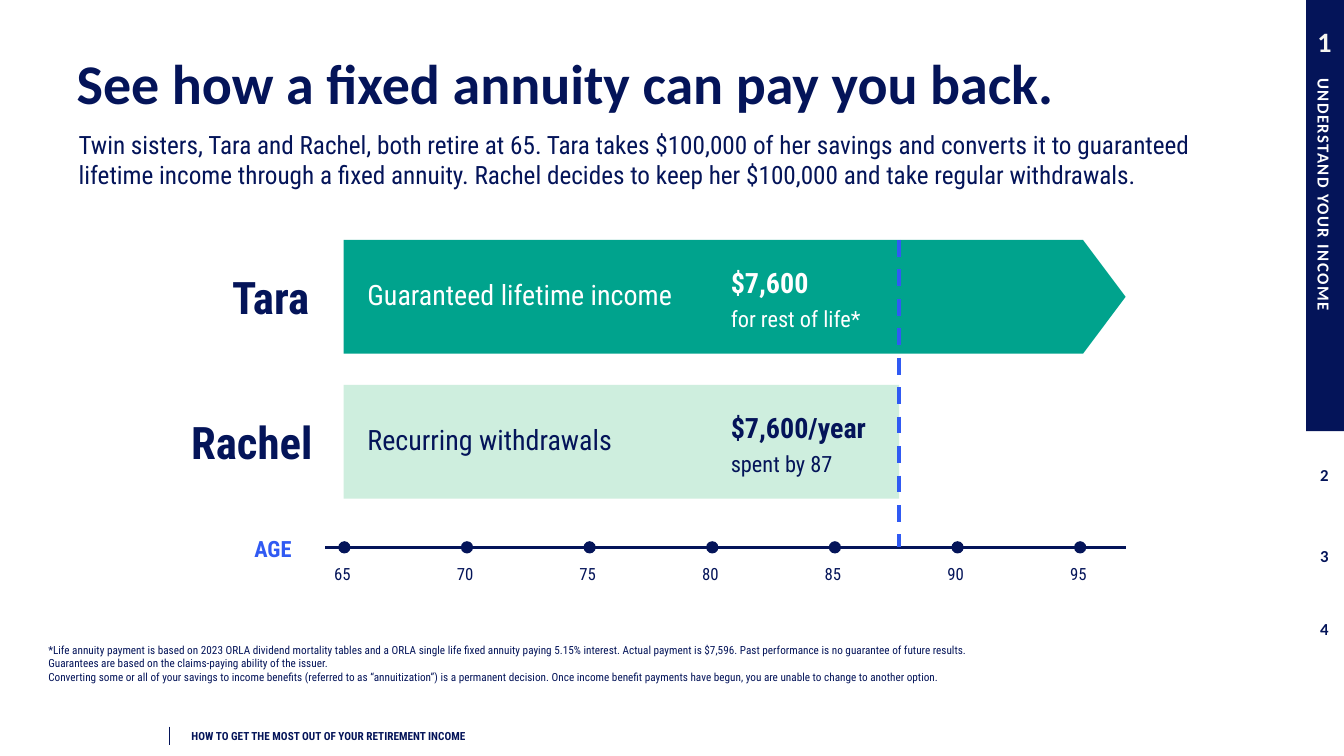
from dataclasses import dataclass
from typing import Any

from lxml.etree import SubElement
from pptx import Presentation
from pptx.dml.color import RGBColor
from pptx.enum.dml import MSO_LINE
from pptx.enum.shapes import MSO_CONNECTOR, MSO_SHAPE
from pptx.enum.text import MSO_ANCHOR, MSO_AUTO_SIZE, PP_ALIGN
from pptx.oxml.ns import qn
from pptx.util import Pt


@dataclass(frozen=True)
class Theme:
    heading_font: str = "Calibri"
    body_font: str = "Roboto Condensed"
    navy: str = "041459"
    blue: str = "305AF3"
    green: str = "00A38D"
    mint: str = "CEEEDE"
    white: str = "FFFFFF"
    off_white: str = "F5F5F0"
    title: float = 40
    name: float = 32
    large: float = 20
    intro: float = 18
    medium: float = 16
    small: float = 12
    note: float = 8


THEME = Theme()


@dataclass(frozen=True)
class Box:
    left: float
    top: float
    width: float
    height: float

    def lengths(self) -> tuple:
        return Pt(self.left), Pt(self.top), Pt(self.width), Pt(self.height)


@dataclass(frozen=True)
class Style:
    size: float
    color: str = THEME.navy
    bold: bool = False
    font: str = THEME.body_font
    spacing: float = 0


@dataclass(frozen=True)
class RailTab:
    text: str
    box: Box
    fill: str
    style: Style
    vertical: bool = False


@dataclass(frozen=True)
class Sister:
    name: str
    name_right: float
    bar: Box
    bar_shape: MSO_SHAPE
    fill: str
    text_color: str
    plan: str
    amount: str
    outcome: str


AXIS_Y = 391
AXIS_LEFT, AXIS_RIGHT = 232.5, 804
AGE_65_X, AGE_STEP = 246, 87.6
SPENT_X = 642.2
BAR_LEFT, BAR_HEIGHT = 245.5, 81.2
TARA_TOP, RACHEL_TOP = 171.4, 275
ARROW_TIP = 30.4

RAIL_LEFT, RAIL_WIDTH = 932, 28
NUMBER_STYLE = Style(THEME.small, bold=True, font=THEME.heading_font)
RAIL_TABS = [
    RailTab("1", Box(RAIL_LEFT, 0, RAIL_WIDTH, 58.3), THEME.navy,
            Style(THEME.large, THEME.off_white, True, THEME.heading_font)),
    RailTab("UNDERSTAND YOUR INCOME", Box(RAIL_LEFT, 49, RAIL_WIDTH, 259), THEME.navy,
            Style(THEME.small, THEME.white, True, THEME.heading_font, 1), vertical=True),
] + [
    RailTab(number, Box(RAIL_LEFT, top, RAIL_WIDTH, 60.5), THEME.white, NUMBER_STYLE)
    for number, top in (("2", 309), ("3", 366.5), ("4", 419))
]

SISTERS = [
    Sister("Tara", 221, Box(BAR_LEFT, TARA_TOP, AXIS_RIGHT - BAR_LEFT, BAR_HEIGHT),
           MSO_SHAPE.PENTAGON, THEME.green, THEME.white,
           "Guaranteed lifetime income", "$7,600", "for rest of life*"),
    Sister("Rachel", 223.2, Box(BAR_LEFT, RACHEL_TOP, SPENT_X - BAR_LEFT, BAR_HEIGHT),
           MSO_SHAPE.RECTANGLE, THEME.mint, THEME.navy,
           "Recurring withdrawals", "$7,600/year", "spent by 87"),
]

FOOTNOTES = [
    "*Life annuity payment is based on 2023 ORLA dividend mortality tables and a ORLA single life "
    "fixed annuity paying 5.15% interest. Actual payment is $7,596. Past performance is no "
    "guarantee of future results.",
    "Guarantees are based on the claims-paying ability of the issuer.",
    "Converting some or all of your savings to income benefits (referred to as “annuitization”) is "
    "a permanent decision. Once income benefit payments have begun, you are unable to change to "
    "another option.",
]


def apply_format(target: Any, values: dict) -> None:
    for name, value in values.items():
        setattr(target, name, value)


def add_run(paragraph: Any, text: str, style: Style) -> None:
    run = paragraph.add_run()
    run.text = text
    apply_format(run.font, {"name": style.font, "size": Pt(style.size), "bold": style.bold})
    run.font.color.rgb = RGBColor.from_string(style.color)
    if style.spacing:
        run.font._element.set("spc", str(round(style.spacing * 100)))


def add_text(slide: Any, box: Box, lines: list, style: Style,
             frame_format: dict | None = None, paragraph_format: dict | None = None) -> Any:
    """Add a wrapped text box with one paragraph per line; return its frame."""
    frame = slide.shapes.add_textbox(*box.lengths()).text_frame
    apply_format(frame, {"word_wrap": True} | (frame_format or {}))
    for index, line in enumerate(lines):
        paragraph = frame.add_paragraph() if index else frame.paragraphs[0]
        apply_format(paragraph, paragraph_format or {})
        add_run(paragraph, line, style)
    return frame


def tight(left: float = 1, top: float = 1) -> dict:
    """Return frame values for a box with hardly any insets."""
    return {"margin_left": Pt(left), "margin_top": Pt(top), "margin_right": 0, "margin_bottom": 0}


def add_filled(slide: Any, kind: MSO_SHAPE, box: Box, fill: str) -> Any:
    shape = slide.shapes.add_shape(kind, *box.lengths())
    shape.shadow.inherit = False
    shape.fill.solid()
    shape.fill.fore_color.rgb = RGBColor.from_string(fill)
    shape.line.fill.background()
    return shape


def add_line(slide: Any, start: tuple, end: tuple, color: str, width: float) -> Any:
    connector = slide.shapes.add_connector(
        MSO_CONNECTOR.STRAIGHT, *(Pt(value) for value in (*start, *end)))
    connector.line.color.rgb = RGBColor.from_string(color)
    connector.line.width = Pt(width)
    SubElement(connector._element.spPr, qn("a:effectLst"))
    return connector


def add_rail_tab(slide: Any, tab: RailTab) -> None:
    frame = add_filled(slide, MSO_SHAPE.RECTANGLE, tab.box, tab.fill).text_frame
    apply_format(frame, {"word_wrap": True, "vertical_anchor": MSO_ANCHOR.MIDDLE})
    paragraph = frame.paragraphs[0]
    paragraph.alignment = PP_ALIGN.LEFT if tab.vertical else PP_ALIGN.CENTER
    if tab.vertical:
        frame._txBody.bodyPr.set("vert", "vert")
    add_run(paragraph, tab.text, tab.style)


def add_sister(slide: Any, sister: Sister) -> None:
    top = sister.bar.top
    add_text(slide, Box(sister.name_right - 145, top + 20, 145, 39.6), [sister.name],
             Style(THEME.name, bold=True), tight(), {"alignment": PP_ALIGN.RIGHT})
    bar = add_filled(slide, sister.bar_shape, sister.bar, sister.fill)
    if sister.bar_shape == MSO_SHAPE.PENTAGON:
        bar.adjustments[0] = ARROW_TIP / BAR_HEIGHT
    add_text(slide, Box(261.5, top + 25.6, 230, 25), [sister.plan],
             Style(THEME.large, sister.text_color), tight())
    result = add_text(slide, Box(521, top + 12.2, 115, 52), [sister.amount],
                      Style(THEME.large, sister.text_color, True), tight(top=5.8),
                      {"line_spacing": Pt(24)}).paragraphs[0]
    result.add_line_break()
    add_run(result, sister.outcome, Style(THEME.medium, sister.text_color))


def add_age_axis(slide: Any) -> None:
    add_text(slide, Box(180.7, 381, 36, 20), ["AGE"],
             Style(THEME.medium, THEME.blue, True), tight())
    add_line(slide, (AXIS_LEFT, AXIS_Y), (AXIS_RIGHT, AXIS_Y), THEME.navy, 2)
    radius = 4.4
    for index, age in enumerate(range(65, 100, 5)):
        center = AGE_65_X + index * AGE_STEP
        add_filled(slide, MSO_SHAPE.OVAL,
                   Box(center - radius, AXIS_Y - radius, 2 * radius, 2 * radius), THEME.navy)
        add_text(slide, Box(center - 8.3, 401.8, 21, 16), [str(age)], Style(THEME.small), tight())


def main() -> None:
    presentation = Presentation()
    apply_format(presentation, {"slide_width": Pt(960), "slide_height": Pt(540)})
    slide = presentation.slides.add_slide(presentation.slide_layouts[5])

    title = slide.shapes.title
    title_box = Box(47.5, 34.6, 863, 54).lengths()
    apply_format(title, dict(zip(("left", "top", "width", "height"), title_box)))
    apply_format(title.text_frame, {"word_wrap": True, "auto_size": MSO_AUTO_SIZE.NONE,
                                    "vertical_anchor": MSO_ANCHOR.MIDDLE})
    heading = title.text_frame.paragraphs[0]
    apply_format(heading, {"alignment": PP_ALIGN.LEFT, "line_spacing": 0.9})
    add_run(heading, "See how a fixed annuity can pay you back.",
            Style(THEME.title, bold=True, font=THEME.heading_font))

    for tab in RAIL_TABS:
        add_rail_tab(slide, tab)
    add_line(slide, (RAIL_LEFT, 0), (RAIL_LEFT, 540), THEME.white, 1.5)
    add_line(slide, (121, 519), (121, 532), THEME.navy, 1)
    add_text(slide, Box(136.8, 520.6, 499, 9.4),
             ["HOW TO GET THE MOST OUT OF YOUR RETIREMENT INCOME"],
             Style(THEME.note, bold=True), tight(0, 0))
    add_text(slide, Box(49, 88.6, 841.7, 72.7),
             ["Twin sisters, Tara and Rachel, both retire at 65. Tara takes $100,000 of her savings "
              "and converts it to guaranteed lifetime income through a fixed annuity. Rachel decides "
              "to keep her $100,000 and take regular withdrawals."], Style(THEME.intro))

    for sister in SISTERS:
        add_sister(slide, sister)
    add_age_axis(slide)
    spent_line = add_line(slide, (SPENT_X, TARA_TOP), (SPENT_X, AXIS_Y), THEME.blue, 3)
    spent_line.line.dash_style = MSO_LINE.DASH
    add_text(slide, Box(27.4, 458.6, 881, 33.2), FOOTNOTES, Style(THEME.note),
             {"vertical_anchor": MSO_ANCHOR.BOTTOM}, {"line_spacing": 0.9, "space_after": Pt(1)})
    presentation.save("out.pptx")


if __name__ == "__main__":
    main()
